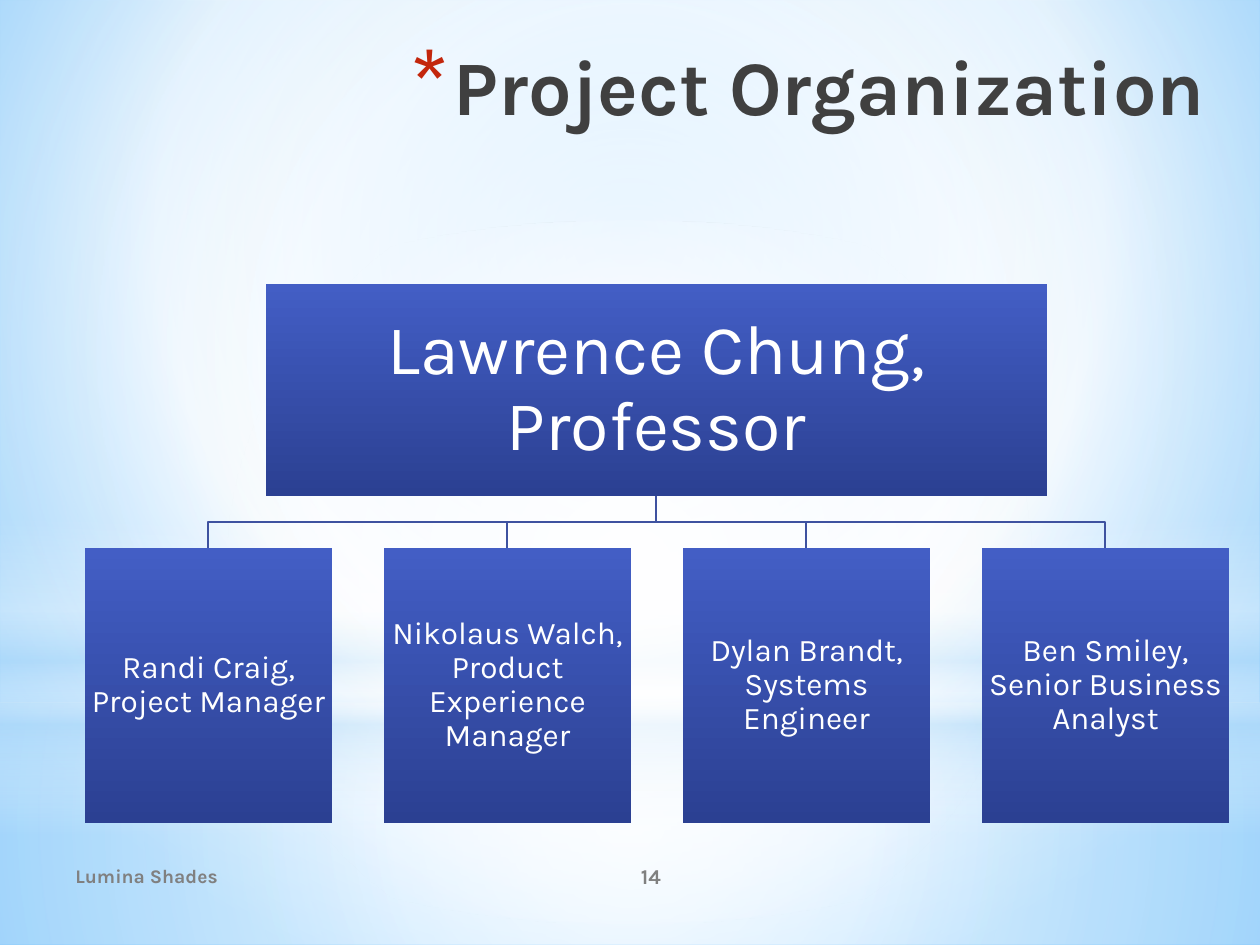
from dataclasses import dataclass
from typing import Optional

from lxml import etree
from pptx import Presentation
from pptx.dml.color import RGBColor
from pptx.enum.shapes import MSO_SHAPE
from pptx.enum.text import MSO_ANCHOR, PP_ALIGN
from pptx.oxml.ns import qn
from pptx.util import Emu, Pt

RECT, OVAL = MSO_SHAPE.RECTANGLE, MSO_SHAPE.OVAL
LEFT, CENTER, RIGHT = PP_ALIGN.LEFT, PP_ALIGN.CENTER, PP_ALIGN.RIGHT
TOP, MIDDLE = MSO_ANCHOR.TOP, MSO_ANCHOR.MIDDLE
EMU_PER_PX = 914400 / 126


@dataclass(frozen=True)
class Area:
    left: int
    top: int
    width: int
    height: int

    @property
    def center(self) -> int:
        return self.left + self.width // 2

    @property
    def bottom(self) -> int:
        return self.top + self.height

    def emu(self) -> list[Emu]:
        return [px(n) for n in (self.left, self.top, self.width, self.height)]


@dataclass(frozen=True)
class Gradient:
    stops: tuple  # (position %, colour, opacity %)
    focus: Optional[tuple] = None  # left, top, right, bottom %; None is linear


@dataclass(frozen=True)
class Member:
    text: str
    area: Area
    size: int
    inset: int


@dataclass(frozen=True)
class Theme:
    font: str = "Karla"
    title: str = "404040"
    bullet: str = "C3260C"
    footer: str = "808080"
    on_box: str = "FFFFFF"
    line: str = "3E52A0"
    line_width: float = 1.25
    title_size: int = 44
    lead_size: int = 40
    member_size: int = 18
    footer_size: int = 11
    number_size: int = 12
    box: Gradient = Gradient(((0, "435EC5", 100), (100, "2B4092", 100)))
    backdrop: Gradient = Gradient(
        ((0, "9ED5FF", 100), (60, "FFFFFF", 100), (100, "5BB9FF", 100)),
        (20, 10, 20, 60))


THEME = Theme()
MIDPOINT = (50, 50, 50, 50)

# Soft light layers, back to front
LAYERS = (
    (RECT, Area(0, 703, 1260, 242), Gradient(
        ((0, "FFFFFF", 91), (37, "FFFFFF", 76), (100, "B4DCFA", 79)), MIDPOINT)),
    (RECT, Area(0, 0, 1260, 703), Gradient(
        ((0, "FFFFFF", 89), (48, "FFFFFF", 62), (100, "B4DCFA", 79)), MIDPOINT)),
    (RECT, Area(0, 519, 1260, 315), Gradient(
        ((0, "FFFFFF", 0), (29, "FFFFFF", 30), (45, "B4DCFA", 40),
         (55, "FFFFFF", 26), (65, "B4DCFA", 60), (100, "FFFFFF", 0)))),
    (OVAL, Area(0, 221, 1260, 703), Gradient(
        ((0, "FFFFFF", 100), (56, "FFFFFF", 0)), MIDPOINT)),
)

LEAD = Member("Lawrence Chung, Professor", Area(266, 284, 781, 212),
              THEME.lead_size, 4)
TEAM_TEXTS = (
    "Randi Craig, Project Manager",
    "Nikolaus Walch, Product Experience Manager",
    "Dylan Brandt, Systems Engineer",
    "Ben Smiley, Senior Business Analyst",
)
TEAM_LEFT, TEAM_PITCH = 85, 299
TEAM = [Member(text, Area(TEAM_LEFT + index * TEAM_PITCH, 548, 247, 275),
               THEME.member_size, 1)
        for index, text in enumerate(TEAM_TEXTS)]


def px(length: int) -> Emu:
    return Emu(round(length * EMU_PER_PX))


def paint_gradient(fill, owner, gradient: Gradient) -> None:
    """Fill the owner element with the stops of the gradient."""
    fill.gradient()
    grad = owner.find(".//" + qn("a:gradFill"))
    for child in list(grad):
        grad.remove(child)
    stop_list = etree.SubElement(grad, qn("a:gsLst"))
    for position, color, opacity in gradient.stops:
        stop = etree.SubElement(stop_list, qn("a:gs"), pos=str(position * 1000))
        tint = etree.SubElement(stop, qn("a:srgbClr"), val=color)
        if opacity < 100:
            etree.SubElement(tint, qn("a:alpha"), val=str(opacity * 1000))
    if gradient.focus is None:
        etree.SubElement(grad, qn("a:lin"), ang="5400000", scaled="0")
    else:
        path = etree.SubElement(grad, qn("a:path"), path="circle")
        edges = {side: str(value * 1000)
                 for side, value in zip("ltrb", gradient.focus)}
        etree.SubElement(path, qn("a:fillToRect"), **edges)


def write_text(shape, text: str, *, size: int, color: str, bold: bool = False,
               align=LEFT, anchor=MIDDLE, inset: Optional[int] = None,
               spacing: Optional[float] = None):
    """Write one formatted paragraph and return it."""
    frame = shape.text_frame
    frame.word_wrap = True
    frame.vertical_anchor = anchor
    if inset is not None:
        frame.margin_left = frame.margin_right = px(inset)
        frame.margin_top = frame.margin_bottom = px(inset)
    para = frame.paragraphs[0]
    para.alignment = align
    if spacing is not None:
        para.line_spacing = spacing
    span = para.add_run()
    span.text = text
    span.font.name = THEME.font
    span.font.size = Pt(size)
    span.font.bold = bold
    span.font.color.rgb = RGBColor.from_string(color)
    return para


def add_bullet(para, char: str, color: str, percent: int, indent: int) -> None:
    props = para._p.get_or_add_pPr()
    props.set("marL", str(px(indent)))
    props.set("indent", str(-px(indent)))
    tint = etree.SubElement(props, qn("a:buClr"))
    etree.SubElement(tint, qn("a:srgbClr"), val=color)
    etree.SubElement(props, qn("a:buSzPct"), val=str(percent * 1000))
    etree.SubElement(props, qn("a:buFont"), typeface=THEME.font)
    etree.SubElement(props, qn("a:buChar"), char=char)


def draw_shape(page, kind, area: Area, gradient: Gradient):
    shape = page.shapes.add_shape(kind, *area.emu())
    shape.shadow.inherit = False
    shape.line.fill.background()
    paint_gradient(shape.fill, shape.element.spPr, gradient)
    return shape


def draw_member(page, member: Member) -> None:
    box = draw_shape(page, RECT, member.area, THEME.box)
    write_text(box, member.text, size=member.size, color=THEME.on_box,
               align=CENTER, inset=member.inset, spacing=0.9)


def draw_branch(page, upper: Area, lower: Area) -> None:
    middle = (upper.bottom + lower.top) // 2
    builder = page.shapes.build_freeform(upper.center, upper.bottom, EMU_PER_PX)
    builder.add_line_segments([(upper.center, middle), (lower.center, middle),
                               (lower.center, lower.top)], close=False)
    branch = builder.convert_to_shape()
    branch.shadow.inherit = False
    branch.fill.background()
    branch.line.color.rgb = RGBColor.from_string(THEME.line)
    branch.line.width = Pt(THEME.line_width)


def draw_text(page, area: Area, text: str, **text_format):
    box = page.shapes.add_textbox(*area.emu())
    return write_text(box, text, **text_format)


def main() -> None:
    deck = Presentation()
    deck.slide_width, deck.slide_height = px(1260), px(945)
    page = deck.slides.add_slide(deck.slide_layouts[6])

    # Background
    paint_gradient(page.background.fill, page.element, THEME.backdrop)
    for kind, area, gradient in LAYERS:
        draw_shape(page, kind, area, gradient)

    # Title
    title = draw_text(page, Area(42, 32, 1176, 157), "Project Organization",
                      size=THEME.title_size, color=THEME.title, bold=True,
                      align=RIGHT, anchor=TOP)
    add_bullet(title, "*", THEME.bullet, 128, 44)

    # Organization chart
    for member in reversed(TEAM):
        draw_branch(page, LEAD.area, member.area)
    for member in (LEAD, *TEAM):
        draw_member(page, member)

    # Footer
    draw_text(page, Area(63, 851, 462, 50), "Lumina Shades",
              size=THEME.footer_size, color=THEME.footer, bold=True)
    draw_text(page, Area(525, 851, 252, 50), "14", size=THEME.number_size,
              color=THEME.footer, bold=True, align=CENTER)

    deck.save("out.pptx")


if __name__ == "__main__":
    main()
